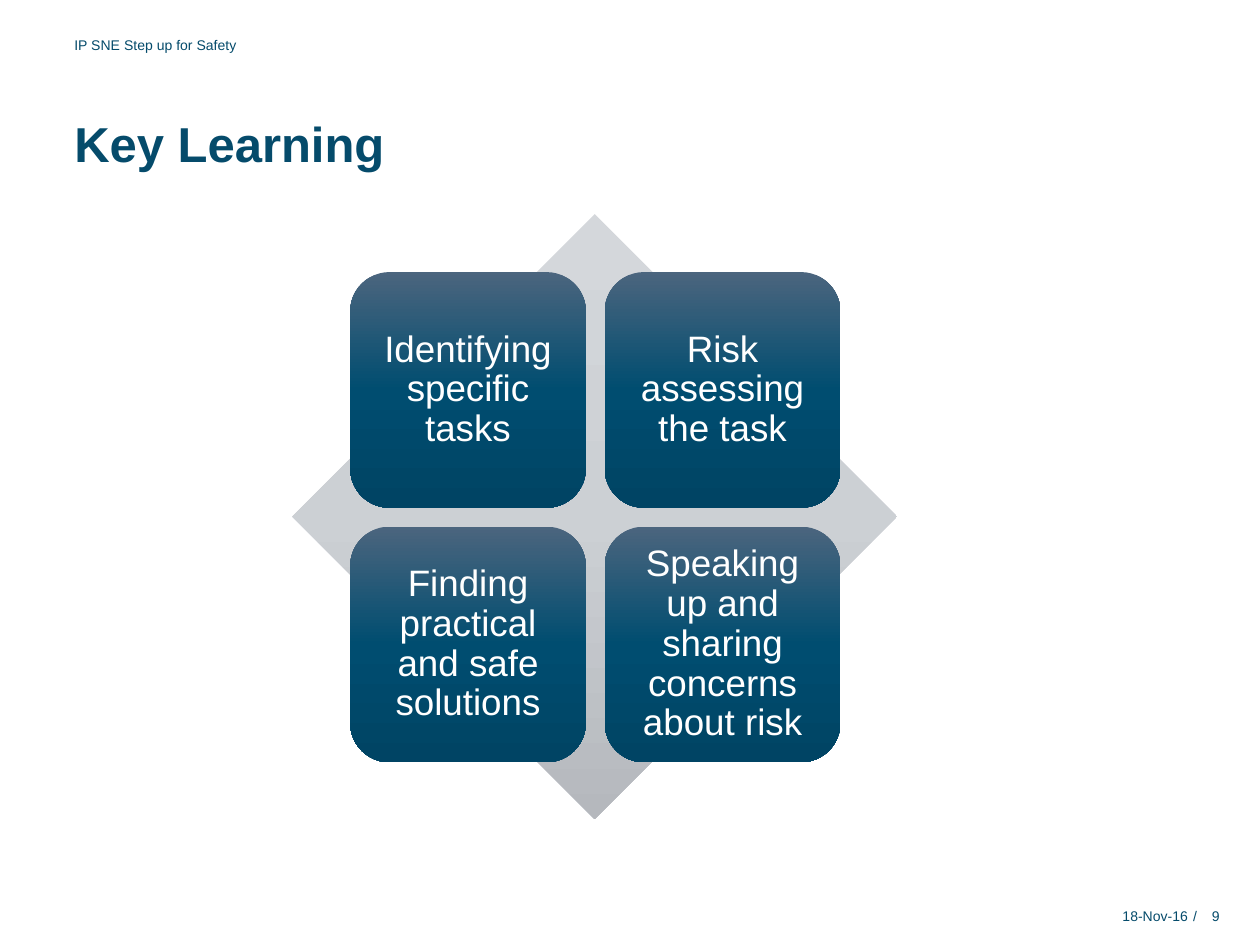
import copy

import pptx
import pptx.dml.color
import pptx.enum.shapes
import pptx.enum.text
import pptx.oxml.ns
import pptx.util

Inches = pptx.util.Inches
Pt = pptx.util.Pt
MSO_SHAPE = pptx.enum.shapes.MSO_SHAPE
ANCHOR = pptx.enum.text.MSO_ANCHOR
ALIGN = pptx.enum.text.PP_ALIGN

FONT = "Arial"
NAVY = "054B6B"
WHITE = "FFFFFF"
DIAMOND_SHADES = ("D4D7DB", "CCD0D4", "B5B8BD")
TILE_SHADES = ("4B657E", "004D70", "004464")

LEARNINGS = (
    "Identifying specific tasks",
    "Risk assessing the task",
    "Finding practical and safe solutions",
    "Speaking up and sharing concerns about risk",
)
TILE_LEFT, TILE_TOP = 2.78, 2.16
TILE_SIZE, TILE_PITCH = 1.87, 2.02


def color(hex_string):
    return pptx.dml.color.RGBColor.from_string(hex_string)


def write_text(shape, text, size, hex_color, align, anchor, inset=0, bold=False):
    frame = shape.text_frame
    frame.word_wrap = True
    frame.vertical_anchor = anchor
    frame.margin_left = frame.margin_right = Inches(inset)
    frame.margin_top = frame.margin_bottom = Inches(inset)
    paragraph = frame.paragraphs[0]
    paragraph.text = text
    paragraph.alignment = align
    paragraph.font.name = FONT
    paragraph.font.size = Pt(size)
    paragraph.font.bold = bold
    paragraph.font.color.rgb = color(hex_color)
    return paragraph


def add_label(slide, text, left, top, width, height=0.2, size=8,
              align=ALIGN.LEFT, anchor=ANCHOR.MIDDLE, bold=False):
    label = slide.shapes.add_textbox(
        Inches(left), Inches(top), Inches(width), Inches(height))
    write_text(label, text, size, NAVY, align, anchor, bold=bold)
    label.text_frame.word_wrap = width > 0.1


def add_shaded_shape(slide, preset, left, top, size, shades):
    """Add a square-framed shape shaded from top to bottom in three steps."""
    shape = slide.shapes.add_shape(
        preset, Inches(left), Inches(top), Inches(size), Inches(size))
    shape.shadow.inherit = False
    shape.line.fill.background()
    shape.fill.gradient()
    shape.fill.gradient_angle = 270
    # The default gradient has two stops; add the third
    stop_list = next(shape._element.spPr.iter(pptx.oxml.ns.qn("a:gsLst")))
    stop_list.append(copy.deepcopy(stop_list[-1]))
    for stop, position, shade in zip(shape.fill.gradient_stops, (0, 0.5, 1), shades):
        stop.position = position
        stop.color.rgb = color(shade)
    return shape


def add_learning_tile(slide, index, text):
    row, column = divmod(index, 2)
    tile = add_shaded_shape(
        slide, MSO_SHAPE.ROUNDED_RECTANGLE,
        TILE_LEFT + column * TILE_PITCH, TILE_TOP + row * TILE_PITCH,
        TILE_SIZE, TILE_SHADES)
    paragraph = write_text(tile, text, 21, WHITE, ALIGN.CENTER, ANCHOR.MIDDLE, inset=0.09)
    paragraph.line_spacing = 0.9


def main():
    presentation = pptx.Presentation()
    presentation.slide_width = Inches(10)
    presentation.slide_height = Inches(7.5)
    slide = presentation.slides.add_slide(presentation.slide_layouts[6])

    # Header and title
    add_label(slide, "IP SNE Step up for Safety", 0.59, 0.26, 4.72)
    add_label(slide, "Key Learning", 0.59, 0.9, 7.95, 0.47, size=28,
              anchor=ANCHOR.TOP, bold=True)

    # Diamond with the four learnings on top
    add_shaded_shape(slide, MSO_SHAPE.DIAMOND, 2.32, 1.7, 4.8, DIAMOND_SHADES)
    for index, learning in enumerate(LEARNINGS):
        add_learning_tile(slide, index, learning)

    # Footer: date / page number
    add_label(slide, "18-Nov-16", 7.1, 7.17, 2.33, align=ALIGN.RIGHT)
    add_label(slide, "/", 9.47, 7.17, 0.04)
    add_label(slide, "9", 9.52, 7.17, 0.16, align=ALIGN.RIGHT)

    presentation.save("out.pptx")


if __name__ == "__main__":
    main()
